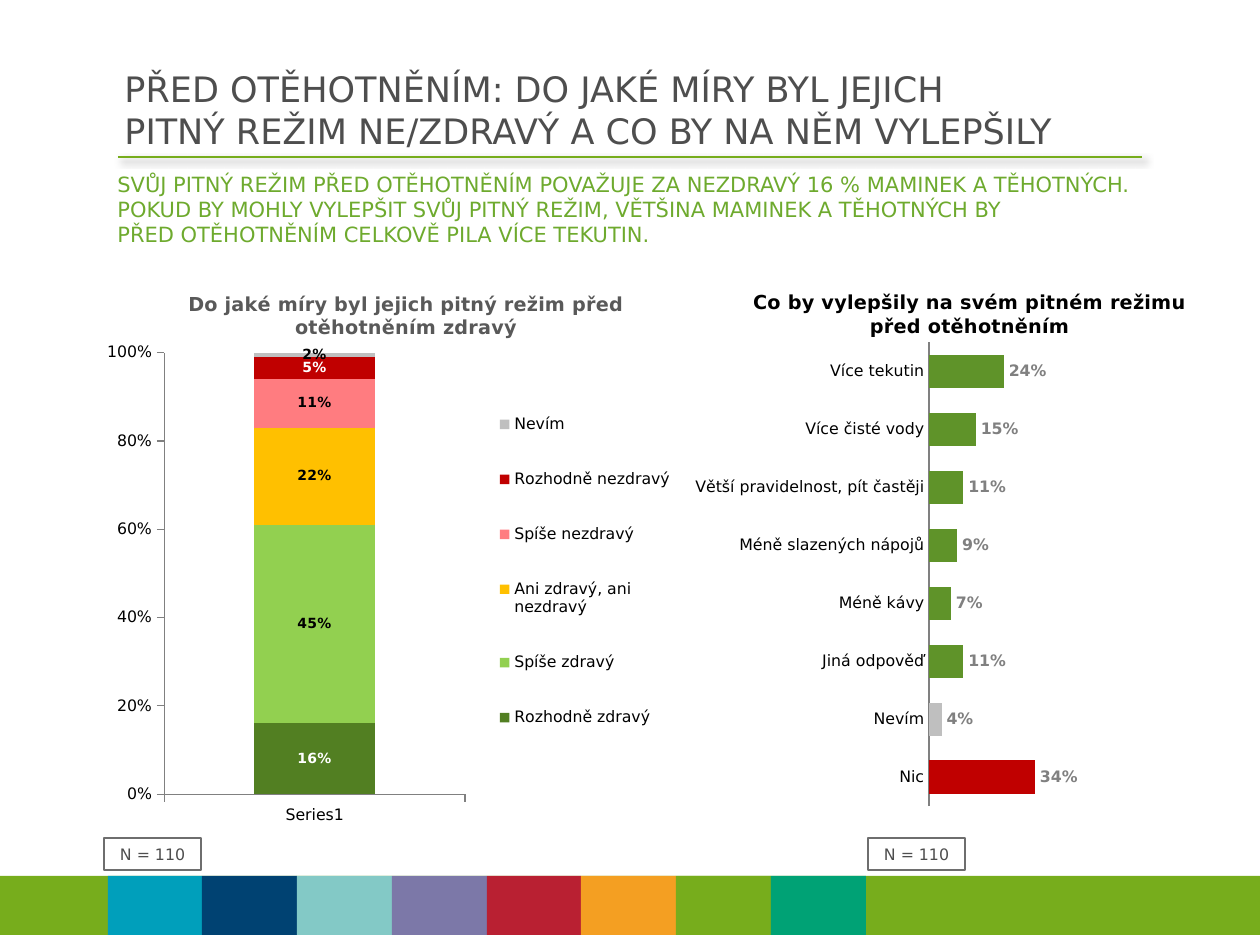
from pptx import Presentation
from pptx.chart.data import CategoryChartData
from pptx.dml.color import RGBColor
from pptx.enum.chart import XL_CHART_TYPE, XL_LABEL_POSITION, XL_LEGEND_POSITION, XL_TICK_MARK
from pptx.enum.shapes import MSO_CONNECTOR, MSO_SHAPE
from pptx.enum.text import MSO_ANCHOR, PP_ALIGN
from pptx.oxml import parse_xml
from pptx.oxml.ns import nsdecls, qn
from pptx.util import Pt

FONT = "DejaVu Sans"
BLACK, WHITE = RGBColor(0, 0, 0), RGBColor(255, 255, 255)
TEXT, BORDER = RGBColor(0x4E, 0x4E, 0x4E), RGBColor(0x6E, 0x6E, 0x6E)
ACCENT, GREEN = RGBColor(0x6E, 0xAA, 0x2E), RGBColor(0x77, 0xAD, 0x1C)
BAR_GREEN, RED = RGBColor(0x5F, 0x93, 0x29), RGBColor(0xC0, 0, 0)
SILVER, GRAY = RGBColor(0xBF, 0xBF, 0xBF), RGBColor(0x80, 0x80, 0x80)
TITLE_GRAY = RGBColor(0x59, 0x59, 0x59)
TILES = [RGBColor(0x00, 0x9F, 0xBB), RGBColor(0x00, 0x42, 0x72), RGBColor(0x83, 0xC9, 0xC6),
         RGBColor(0x7C, 0x78, 0xA8), RGBColor(0xB9, 0x20, 0x32), RGBColor(0xF4, 0x9F, 0x22),
         GREEN, RGBColor(0x00, 0xA2, 0x75)]

TITLE = ["PŘED OTĚHOTNĚNÍM: DO JAKÉ MÍRY BYL JEJICH",
         "PITNÝ REŽIM NE/ZDRAVÝ A CO BY NA NĚM VYLEPŠILY"]
SUBTITLE = ["SVŮJ PITNÝ REŽIM PŘED OTĚHOTNĚNÍM POVAŽUJE ZA NEZDRAVÝ 16 % MAMINEK A TĚHOTNÝCH. "
            "POKUD BY MOHLY VYLEPŠIT SVŮJ PITNÝ REŽIM, VĚTŠINA MAMINEK A TĚHOTNÝCH BY",
            "PŘED OTĚHOTNĚNÍM CELKOVĚ PILA VÍCE TEKUTIN."]
HEALTH_TITLE = "Do jaké míry byl jejich pitný režim před otěhotněním zdravý"
HEALTH = [
    ("Rozhodně zdravý", 0.16, RGBColor(0x52, 0x7F, 0x22), WHITE),
    ("Spíše zdravý", 0.45, RGBColor(0x92, 0xD0, 0x50), BLACK),
    ("Ani zdravý, ani nezdravý", 0.22, RGBColor(0xFF, 0xC0, 0), BLACK),
    ("Spíše nezdravý", 0.11, RGBColor(0xFF, 0x7C, 0x80), BLACK),
    ("Rozhodně nezdravý", 0.05, RED, WHITE),
    ("Nevím", 0.02, SILVER, BLACK),
]
CHANGES_TITLE = "Co by vylepšily na svém pitném režimu před otěhotněním"
CHANGES = [
    ("Více tekutin", 0.24), ("Více čisté vody", 0.15),
    ("Větší pravidelnost, pít častěji", 0.11), ("Méně slazených nápojů", 0.09),
    ("Méně kávy", 0.07), ("Jiná odpověď", 0.11), ("Nevím", 0.04), ("Nic", 0.34),
]
POINT_COLORS = {6: SILVER, 7: RED}
SAMPLE = "N = 110"


def px(*values):
    return [v * 914400 // 126 for v in values]


def style(font, size, color, bold=False):
    font.name, font.size, font.bold = FONT, Pt(size), bold
    font.color.rgb = color


def paint(target, color):
    target.format.fill.solid()
    target.format.fill.fore_color.rgb = color


def add_rect(s, box, fill=None, line=None):
    sp = s.shapes.add_shape(MSO_SHAPE.RECTANGLE, *px(*box))
    sp.shadow.inherit = False
    if fill is None:
        sp.fill.background()
    else:
        sp.fill.solid()
        sp.fill.fore_color.rgb = fill
    if line is None:
        sp.line.fill.background()
    else:
        sp.line.color.rgb = line
        sp.line.width = Pt(0.75)
    return sp


def add_text(s, box, lines, size, color, anchor):
    tf = s.shapes.add_textbox(*px(*box)).text_frame
    tf.word_wrap = True
    tf.vertical_anchor = anchor
    p = tf.paragraphs[0]
    for i, line in enumerate(lines):
        if i:
            p.add_line_break()
        r = p.add_run()
        r.text = line
        style(r.font, size, color)
    return p


def place(parent, index, x, y, w=None, h=None, inner=False):
    for old in parent.findall(qn("c:layout")):
        parent.remove(old)
    parts = [("layoutTarget", "inner")] if inner else []
    parts += [("xMode", "edge"), ("yMode", "edge")]
    parts += [(k, v) for k, v in zip("xywh", (x, y, w, h)) if v is not None]
    body = "".join(f'<c:{k} val="{v}"/>' for k, v in parts)
    parent.insert(index, parse_xml(
        f'<c:layout {nsdecls("c")}><c:manualLayout>{body}</c:manualLayout></c:layout>'))


def add_chart(s, kind, box, cats, series, title, title_color, title_at, plot_at):
    data = CategoryChartData(number_format="0%")
    data.categories = cats
    for name, vals in series:
        data.add_series(name, vals)
    chart = s.shapes.add_chart(kind, *px(*box), data).chart
    style(chart.font, 9, BLACK)
    chart.has_legend = False
    chart.has_title = True
    r = chart.chart_title.text_frame.paragraphs[0].add_run()
    r.text = title
    style(r.font, 11, title_color, True)
    title_xml = chart.chart_title._element
    place(title_xml, 1, *title_at)
    place(chart._chartSpace.chart.plotArea, 0, *plot_at, inner=True)
    chart.plots[0].vary_by_categories = False
    axis = chart.value_axis
    axis.has_major_gridlines = False
    axis.minimum_scale, axis.maximum_scale = 0, 1
    return chart


def add_labels(series, size, color, position):
    labels = series.data_labels
    labels.show_value = True
    labels.number_format, labels.number_format_is_linked = "0%", False
    labels.position = position
    style(labels.font, size, color, True)


def health_chart(s):
    chart = add_chart(s, XL_CHART_TYPE.COLUMN_STACKED, (107, 281, 586, 592), ["Series1"],
                      [(name, [value]) for name, value, _, _ in HEALTH],
                      HEALTH_TITLE, TITLE_GRAY, (0.13, 0.01), (0.095, 0.121, 0.515, 0.746))
    plot = chart.plots[0]
    plot.gap_width, plot.overlap = 150, 100
    for series, (_, _, color, label_color) in zip(plot.series, HEALTH):
        paint(series, color)
        add_labels(series, 8, label_color, XL_LABEL_POSITION.CENTER)
    for axis in (chart.category_axis, chart.value_axis):
        axis.major_tick_mark = XL_TICK_MARK.OUTSIDE
        axis.format.line.color.rgb = GRAY
        style(axis.tick_labels.font, 9, BLACK)
    chart.value_axis.major_unit = 0.2
    labels = chart.value_axis.tick_labels
    labels.number_format, labels.number_format_is_linked = "###0%", False
    chart.has_legend = True
    chart.legend.position = XL_LEGEND_POSITION.RIGHT
    chart.legend.include_in_layout = False
    style(chart.legend.font, 9, BLACK)
    place(chart.legend._element, 1, 0.66, 0.165, 0.31, 0.65)


def changes_chart(s):
    cats, vals = zip(*CHANGES)
    chart = add_chart(s, XL_CHART_TYPE.BAR_CLUSTERED, (689, 280, 605, 558), cats,
                      [("Series 1", vals)], CHANGES_TITLE, BLACK, (0.1, 0.01),
                      (0.397, 0.112, 0.515, 0.831))
    plot = chart.plots[0]
    plot.gap_width = 75
    series = plot.series[0]
    paint(series, BAR_GREEN)
    for i, color in POINT_COLORS.items():
        paint(series.points[i], color)
    add_labels(series, 9, GRAY, XL_LABEL_POSITION.OUTSIDE_END)
    chart.value_axis.visible = False
    axis = chart.category_axis
    axis.reverse_order = True
    axis.major_tick_mark = XL_TICK_MARK.NONE
    axis.format.line.color.rgb = GRAY
    axis.format.line.width = Pt(1.5)
    style(axis.tick_labels.font, 9, BLACK)


def main():
    prs = Presentation()
    prs.slide_width, prs.slide_height = px(1260, 945)
    s = prs.slides.add_slide(prs.slide_layouts[6])

    rule = s.shapes.add_connector(MSO_CONNECTOR.STRAIGHT, *px(118, 157, 1142, 157))
    rule.line.color.rgb = GREEN
    rule.line.width = Pt(0.75)
    rule._element.spPr.append(parse_xml(
        f'<a:effectLst {nsdecls("a")}><a:outerShdw blurRad="50800" dist="38100" dir="2700000">'
        '<a:srgbClr val="000000"><a:alpha val="40000"/></a:srgbClr></a:outerShdw></a:effectLst>'))

    top, height, left, right = 876, 59, 108, 866
    add_rect(s, (0, top, 1260, height), GREEN)
    edges = [left + (right - left) * i // len(TILES) for i in range(len(TILES) + 1)]
    for x, end, color in zip(edges, edges[1:], TILES):
        add_rect(s, (x, top, end - x, height), color)

    p = add_text(s, (112, 78, 1118, 64), TITLE, 20, TEXT, MSO_ANCHOR.MIDDLE)
    p.space_after = Pt(3)
    add_text(s, (105, 165, 1111, 69), SUBTITLE, 12, ACCENT, MSO_ANCHOR.TOP)
    health_chart(s)
    changes_chart(s)

    for x in (104, 868):
        sp = add_rect(s, (x, 838, 97, 32), line=BORDER)
        tf = sp.text_frame
        tf.vertical_anchor = MSO_ANCHOR.MIDDLE
        p = tf.paragraphs[0]
        p.alignment = PP_ALIGN.CENTER
        r = p.add_run()
        r.text = SAMPLE
        style(r.font, 9, TEXT)

    prs.save("out.pptx")


if __name__ == "__main__":
    main()
